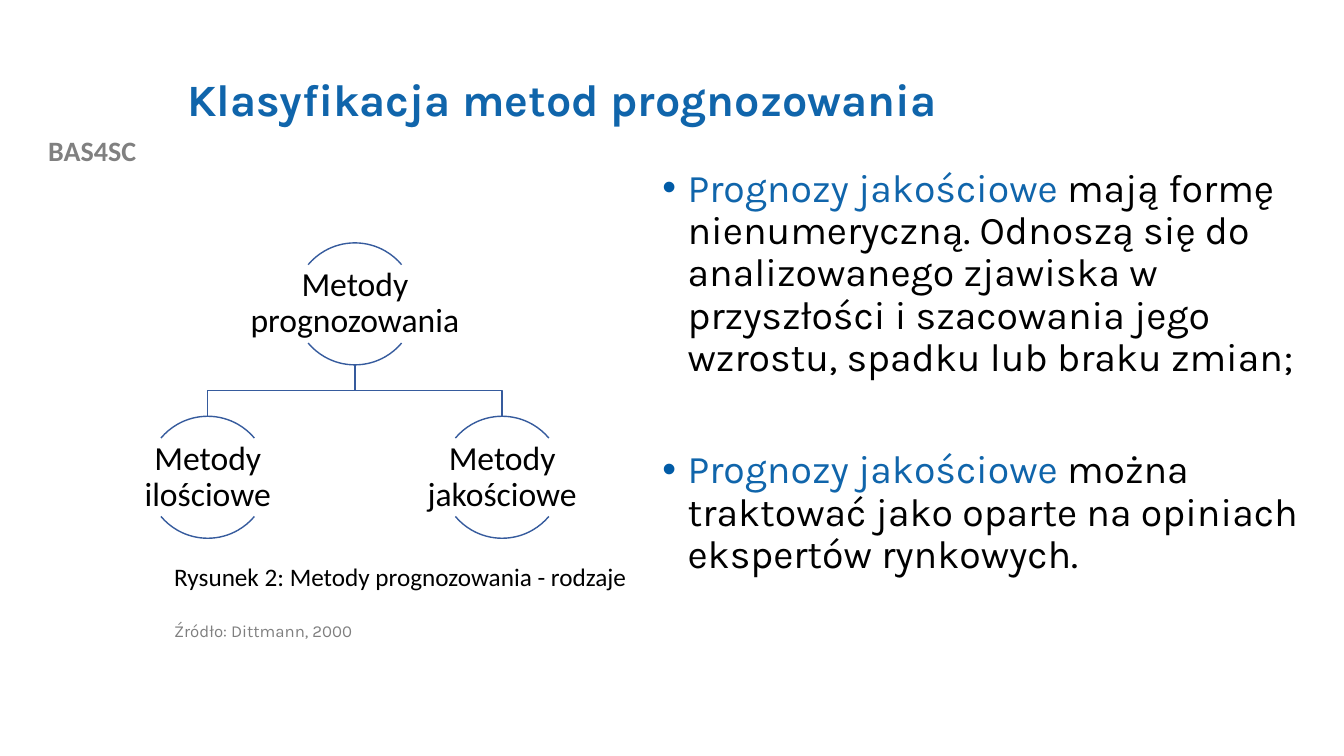
import dataclasses

import lxml.etree
import pptx
import pptx.dml.color
import pptx.enum.shapes
import pptx.enum.text
import pptx.oxml.ns
import pptx.util

Inches = pptx.util.Inches
Pt = pptx.util.Pt
ALIGN = pptx.enum.text.PP_ALIGN
ANCHOR = pptx.enum.text.MSO_ANCHOR


@dataclasses.dataclass(frozen=True)
class Theme:
    """Colours, fonts and type sizes of the slide."""
    blue: str = "1065AB"
    bullet: str = "015BA6"
    line: str = "365B9D"
    black: str = "000000"
    grey: str = "808080"
    source_grey: str = "7F7F7F"
    head_font: str = "Karla"
    label_font: str = "Calibri"
    title: int = 32
    body: int = 28
    node: int = 24
    tag: int = 20
    caption: int = 18
    source: int = 12


THEME = Theme()


def rgb(color):
    """Turn a hex string into a colour."""
    return pptx.dml.color.RGBColor.from_string(color)


def style(r, font, size, color, bold=False):
    """Format one run."""
    r.font.name, r.font.size, r.font.bold = font, Pt(size), bold
    r.font.color.rgb = rgb(color)


def place(sp, box):
    """Move a shape to a box given in inches."""
    sp.left, sp.top, sp.width, sp.height = (Inches(v) for v in box)


def add_text(slide, box, text, font, size, color, bold=False,
             align=ALIGN.LEFT, anchor=ANCHOR.TOP, spacing=1.0, inset=None):
    """Add a wrapped text box with a single paragraph."""
    tf = slide.shapes.add_textbox(*(Inches(v) for v in box)).text_frame
    tf.word_wrap = True
    tf.vertical_anchor = anchor
    if inset is not None:
        tf.margin_left = tf.margin_right = Inches(inset)
        tf.margin_top = tf.margin_bottom = Inches(inset)
    p = tf.paragraphs[0]
    p.text = text
    p.alignment, p.line_spacing = align, spacing
    style(p.runs[0], font, size, color, bold)


def add_title(slide, box, text):
    """Fill the title placeholder."""
    sp = slide.shapes.title
    place(sp, box)
    tf = sp.text_frame
    tf.text = text
    tf.auto_size = pptx.enum.text.MSO_AUTO_SIZE.NONE
    tf.vertical_anchor = ANCHOR.MIDDLE
    p = tf.paragraphs[0]
    p.alignment, p.line_spacing = ALIGN.LEFT, 0.9
    style(p.runs[0], THEME.head_font, THEME.title, THEME.blue, True)


def add_bullet(p):
    """Give a paragraph a coloured bullet with a hanging indent."""
    qn = pptx.oxml.ns.qn
    pPr = p._p.get_or_add_pPr()
    pPr.set("marL", str(Inches(0.25)))
    pPr.set("indent", str(-Inches(0.25)))
    clr = lxml.etree.SubElement(pPr, qn("a:buClr"))
    lxml.etree.SubElement(clr, qn("a:srgbClr")).set("val", THEME.bullet)
    lxml.etree.SubElement(pPr, qn("a:buFont")).set("typeface", "Arial")
    lxml.etree.SubElement(pPr, qn("a:buChar")).set("char", "•")


def add_body(slide, box, items):
    """Fill the body placeholder with (highlight, rest) bullets."""
    sp = slide.placeholders[1]
    place(sp, box)
    tf = sp.text_frame
    tf.auto_size = pptx.enum.text.MSO_AUTO_SIZE.NONE
    for i, item in enumerate(items):
        p = tf.add_paragraph() if i else tf.paragraphs[0]
        add_bullet(p)
        p.alignment, p.line_spacing = ALIGN.LEFT, 0.9
        p.space_before = Pt(50 if i else 0)
        for text, color in zip(item, (THEME.blue, THEME.black)):
            r = p.add_run()
            r.text = text
            style(r, THEME.head_font, THEME.body, color)


def add_node(slide, cx, top, size, text):
    """Draw a label between an upper and a lower arc."""
    for start, end in ((132, 192), (24, 84)):
        sp = slide.shapes.add_shape(
            pptx.enum.shapes.MSO_SHAPE.ARC, Inches(cx - size / 2),
            Inches(top), Inches(size), Inches(size))
        sp.adjustments[0], sp.adjustments[1] = start, end
        outline(sp)
    w, h = 2 * size, 0.64 * size
    add_text(slide, (cx - w / 2, top + (size - h) / 2, w, h), text,
             THEME.label_font, THEME.node, THEME.black, align=ALIGN.CENTER,
             anchor=ANCHOR.MIDDLE, spacing=0.9, inset=0.02)


def outline(sp):
    """Leave only a thin line on a shape."""
    sp.shadow.inherit = False
    sp.fill.background()
    sp.line.color.rgb = rgb(THEME.line)
    sp.line.width = Pt(1)


def add_tree(slide, box, root, children):
    """Draw a root node with its children joined by elbow lines."""
    left, top, width, height = box
    size = 1.21
    cx, bottom = left + width / 2, top + size
    child_top = top + height - size
    middle = (bottom + child_top) / 2
    step = (width - 2 * size) / (len(children) - 1)
    centres = [left + size + i * step for i in range(len(children))]
    for x in centres:
        fb = slide.shapes.build_freeform(Inches(cx), Inches(bottom))
        points = ((cx, middle), (x, middle), (x, child_top))
        fb.add_line_segments([(Inches(a), Inches(b)) for a, b in points],
                             close=False)
        outline(fb.convert_to_shape())
    add_node(slide, cx, top, size, root)
    for x, text in zip(centres, children):
        add_node(slide, x, child_top, size, text)


def add_figure(slide, box):
    """Place the tree of methods with its caption and source."""
    left, top, width, height = box
    add_tree(slide, (left, top, width, 2.93), "Metody prognozowania",
             ["Metody ilościowe", "Metody jakościowe"])
    add_text(slide, (left + 0.78, top + 3.11, 4.73, 0.4),
             "Rysunek 2: Metody prognozowania - rodzaje",
             THEME.label_font, THEME.caption, THEME.black)
    add_text(slide, (left + 0.78, top + height - 0.28, 6.67, 0.28),
             "Źródło: Dittmann, 2000", THEME.head_font, THEME.source,
             THEME.source_grey, spacing=0.9)


def main():
    """Build and save the slide."""
    prs = pptx.Presentation()
    prs.slide_width, prs.slide_height = Inches(13.33), Inches(7.5)
    slide = prs.slides.add_slide(prs.slide_layouts[1])
    add_text(slide, (0, 1.28, 1.83, 0.44), "BAS4SC", THEME.label_font,
             THEME.tag, THEME.grey, True, ALIGN.CENTER)
    add_title(slide, (1.76, 0.4, 10.66, 1.22),
              "Klasyfikacja metod prognozowania")
    add_body(slide, (6.47, 1.62, 6.67, 4.76), [
        ("Prognozy jakościowe ",
         "mają formę nienumeryczną. Odnoszą się do analizowanego zjawiska "
         "w przyszłości i szacowania jego wzrostu, spadku lub braku zmian;"),
        ("Prognozy jakościowe ",
         "można traktować jako oparte na opiniach ekspertów rynkowych."),
    ])
    add_figure(slide, (0.85, 2.41, 5.34, 4))
    prs.save("out.pptx")


if __name__ == "__main__":
    main()
